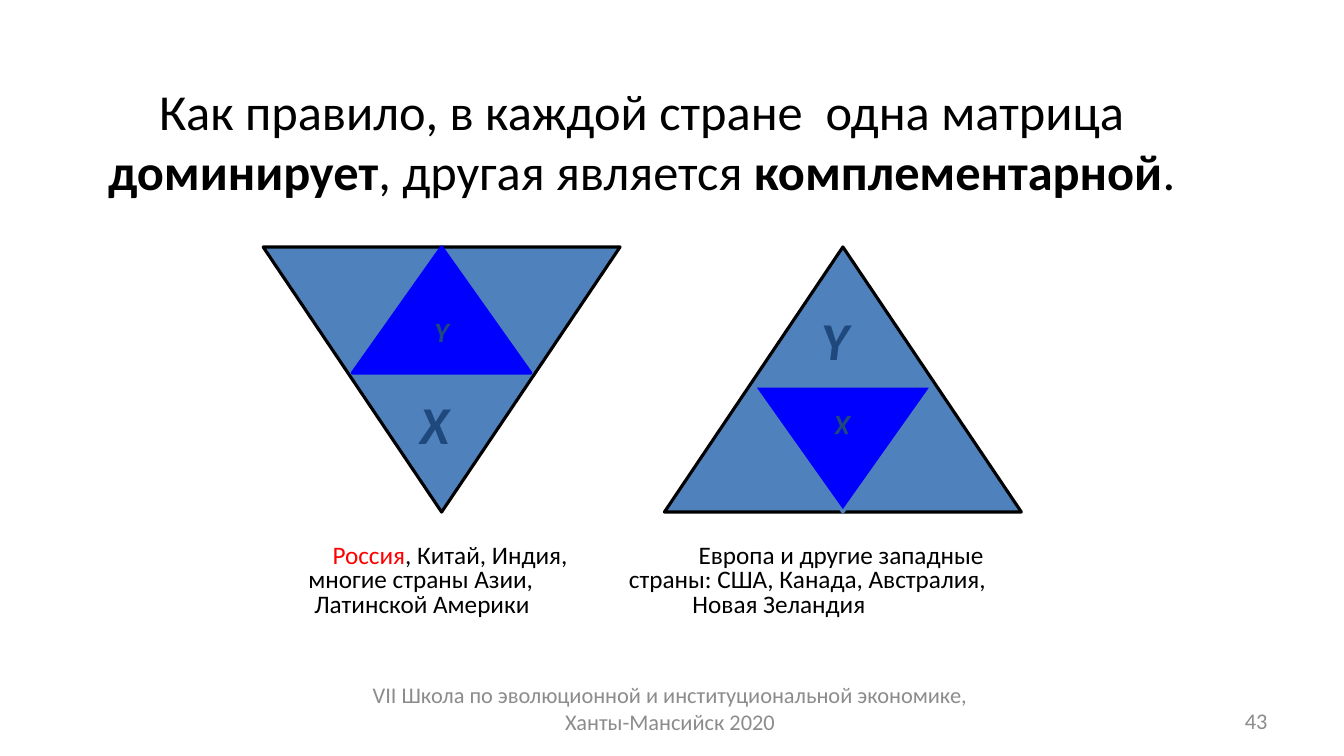
from pptx import Presentation
from pptx.dml.color import RGBColor
from pptx.enum.shapes import MSO_SHAPE
from pptx.enum.text import MSO_ANCHOR, MSO_AUTO_SIZE, PP_ALIGN
from pptx.util import Inches, Pt

BLACK, GREY, RED = "000000", "8C8C8C", "FF0000"
STEEL, BLUE, NAVY = "4F81BD", "0000FF", "1F497D"


def paint(target, color):
    """Set a fill or a font to a solid colour."""
    if hasattr(target, "solid"):
        target.solid()
        target.fore_color.rgb = RGBColor.from_string(color)
    else:
        target.color.rgb = RGBColor.from_string(color)


def write(para, text, size=18, color=BLACK, bold=False, italic=False,
          align=PP_ALIGN.LEFT, font="Calibri"):
    """Add one formatted run to a paragraph."""
    para.alignment = align
    run = para.add_run()
    run.text = text
    run.font.name, run.font.size = font, Pt(size)
    run.font.bold, run.font.italic = bold, italic
    paint(run.font, color)


deck = Presentation()
deck.slide_width, deck.slide_height = Inches(13.33), Inches(7.5)
slide = deck.slides.add_slide(deck.slide_layouts[5])

# Title
title = slide.shapes.title
title.left, title.top = Inches(0.51), Inches(0.61)
title.width, title.height = Inches(11.71), Inches(1.56)
frame = title.text_frame
frame.word_wrap = True
frame.auto_size = MSO_AUTO_SIZE.NONE
frame.vertical_anchor = MSO_ANCHOR.MIDDLE
for text, bold in [("Как правило, в каждой стране  одна матрица ", False),
                   ("доминирует", True), (", другая является ", False),
                   ("комплементарной", True), (".", False)]:
    write(frame.paragraphs[0], text, size=36, bold=bold, align=PP_ALIGN.CENTER)

# Footer and page number
for text, left, top, width, align, anchor in [
        ("VII Школа по эволюционной и институциональной экономике, "
         "Ханты-Мансийск 2020", 3.4, 6.71, 6.49, PP_ALIGN.CENTER, MSO_ANCHOR.TOP),
        ("43", 9.56, 6.95, 3.11, PP_ALIGN.RIGHT, MSO_ANCHOR.MIDDLE)]:
    box = slide.shapes.add_textbox(Inches(left), Inches(top), Inches(width), Inches(0.4))
    box.text_frame.word_wrap = True
    box.text_frame.vertical_anchor = anchor
    write(box.text_frame.paragraphs[0], text, size=16, color=GREY, align=align)

# Matrices: dominant triangle, complementary triangle of half its size, letter plate
TRI, RECT = MSO_SHAPE.ISOSCELES_TRIANGLE, MSO_SHAPE.RECTANGLE
WIDE, TALL, TOP = 3.54, 2.63, 2.45
for left, turn, inner, edge, small, plate, big in [
        (2.61, 180, TOP, BLUE, "Y", 3.83, "X"),
        (6.59, 0, 3.83, STEEL, "X", 3.0, "Y")]:
    mid = left + WIDE / 2
    for kind, width, height, top, angle, fill, line, text, size, align in [
            (TRI, WIDE, TALL, TOP, turn, STEEL, BLACK, "", 0, None),
            (TRI, 1.77, 1.25, inner, 180 - turn, BLUE, edge, small, 20, PP_ALIGN.CENTER),
            (RECT, 0.59, 0.69, plate, 0, STEEL, STEEL, big, 38, PP_ALIGN.LEFT)]:
        shape = slide.shapes.add_shape(kind, Inches(mid - width / 2), Inches(top),
                                       Inches(width), Inches(height))
        shape.rotation = angle
        shape.shadow.inherit = False
        paint(shape.fill, fill)
        paint(shape.line.fill, line)
        shape.line.width = Pt(2.25)
        if text:
            frame = shape.text_frame
            frame.vertical_anchor = MSO_ANCHOR.TOP
            frame.margin_left = frame.margin_right = Inches(0.08)
            write(frame.paragraphs[0], text, size=size, color=NAVY,
                  bold=True, italic=True, align=align)

# Country captions, each line with its own indent in inches
for left, lines in [
        (2.96, [(0.24, [("Россия", RED), (", Китай, Индия,", BLACK)]),
                (0, [("многие страны Азии,", BLACK)]),
                (0.06, [("Латинской Америки", BLACK)])]),
        (6.14, [(0.69, [("Европа и другие западные", BLACK)]),
                (0, [("страны: США, Канада, Австралия,", BLACK)]),
                (0.63, [("Новая Зеландия", BLACK)])])]:
    box = slide.shapes.add_textbox(Inches(left), Inches(5.36), Inches(4), Inches(0.85))
    frame = box.text_frame
    frame.word_wrap = True
    for row, (indent, runs) in enumerate(lines):
        para = frame.add_paragraph() if row else frame.paragraphs[0]
        para.line_spacing = 0.8
        para._p.get_or_add_pPr().set("marL", str(Inches(indent)))
        for text, color in runs:
            write(para, text, color=color)

deck.save("out.pptx")
